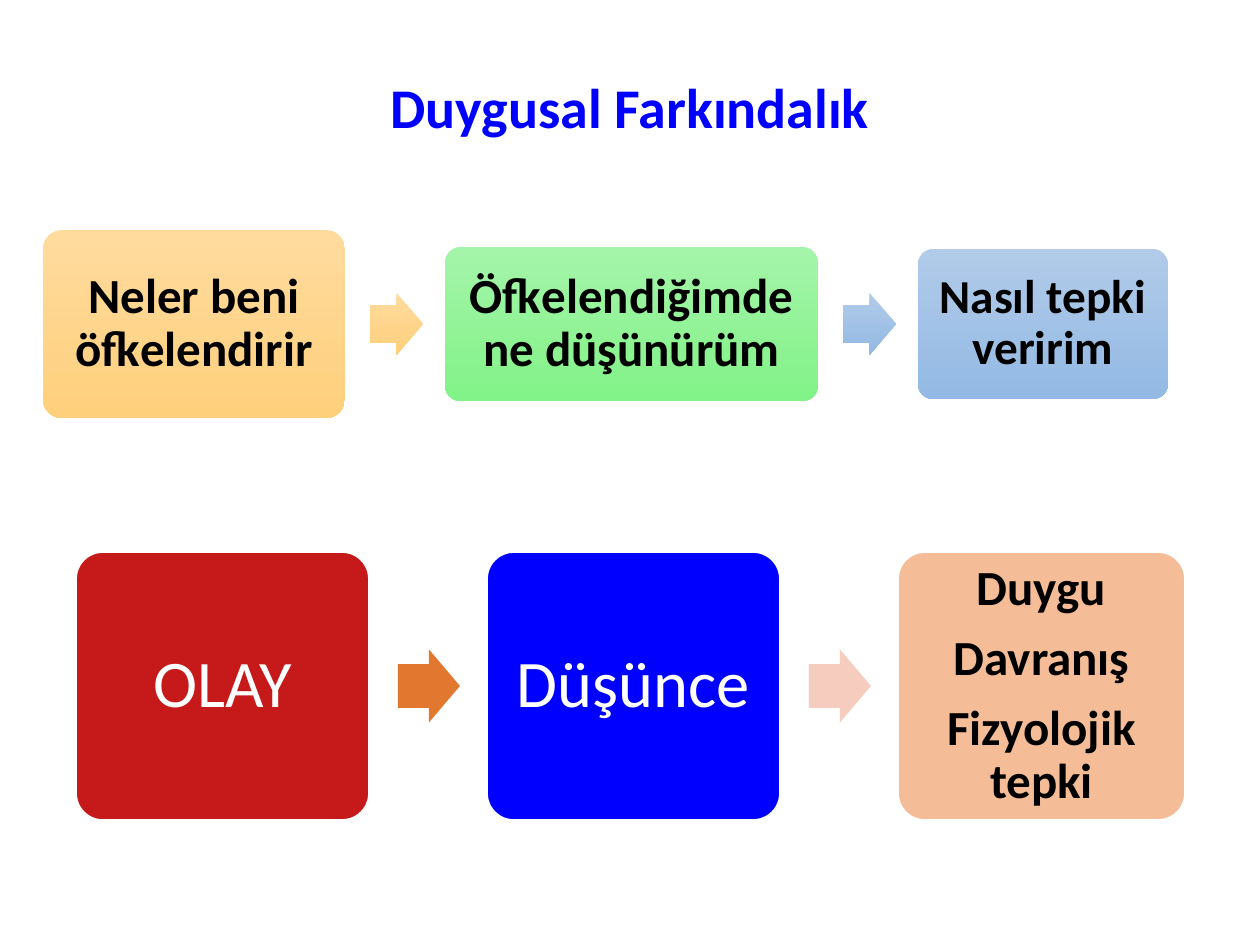
import pptx
import pptx.util
import pptx.dml.color
import pptx.enum.shapes
import pptx.enum.text
import pptx.oxml.ns
from lxml import etree

RGBColor = pptx.dml.color.RGBColor
SHAPES = pptx.enum.shapes.MSO_SHAPE
FONT = "Calibri"
PX = pptx.util.Inches(1) / 126

BLACK = RGBColor(0x00, 0x00, 0x00)
WHITE = RGBColor(0xFF, 0xFF, 0xFF)
BLUE = RGBColor(0x00, 0x00, 0xFF)
RED = RGBColor(0xC0, 0x00, 0x00)
ORANGE = RGBColor(0xED, 0x7D, 0x31)
DARK_ORANGE = RGBColor(0xE2, 0x77, 0x2F)
PINK = RGBColor(0xF6, 0xCC, 0xBF)
# Gradients run from top colour to bottom colour
AMBER = (RGBColor(0xFF, 0xDB, 0x9E), RGBColor(0xFF, 0xD0, 0x7C))
GREEN = (RGBColor(0xA4, 0xF4, 0xA9), RGBColor(0x82, 0xF3, 0x88))
SKY = (RGBColor(0xB1, 0xCB, 0xE9), RGBColor(0x93, 0xB9, 0xE4))

TITLE = "Duygusal Farkındalık"

# Box: lines, width, height, fill, opacity %, font size, bold, font colour, inset
FLOWS = [
    dict(left=43, middle=324, gap=100, arrow_offset=25, arrow_size=(53, 62),
         arrow_fills=[AMBER, SKY], outline=None,
         boxes=[
             (["Neler beni öfkelendirir"], 302, 188, AMBER, 100, 28, True, BLACK, 15),
             (["Öfkelendiğimde ne düşünürüm"], 373, 154, GREEN, 100, 28, True, BLACK, 15),
             (["Nasıl tepki veririm"], 250, 150, SKY, 100, 27, True, BLACK, 14),
         ]),
    dict(left=76, middle=686, gap=118, arrow_offset=29, arrow_size=(62, 73),
         arrow_fills=[DARK_ORANGE, PINK], outline=WHITE,
         boxes=[
             (["OLAY"], 293, 268, RED, 90, 38, False, WHITE, 20),
             (["Düşünce"], 293, 268, BLUE, 100, 38, False, WHITE, 20),
             (["Duygu", "Davranış", "Fizyolojik tepki"],
              287, 268, ORANGE, 50, 28, True, BLACK, 15),
         ]),
]


def px(value):
    return pptx.util.Emu(round(value * PX))


def write_text(shape, lines, size, bold, color, insets, space_after=0):
    frame = shape.text_frame
    frame.word_wrap = True
    frame.vertical_anchor = pptx.enum.text.MSO_ANCHOR.MIDDLE
    (frame.margin_left, frame.margin_top,
     frame.margin_right, frame.margin_bottom) = map(px, insets)
    frame.text = "\n".join(lines)
    for paragraph in frame.paragraphs:
        paragraph.alignment = pptx.enum.text.PP_ALIGN.CENTER
        paragraph.line_spacing = 0.9
        paragraph.space_after = pptx.util.Pt(space_after)
        font = paragraph.font
        font.name, font.size, font.bold = FONT, pptx.util.Pt(size), bold
        font.color.rgb = color


def add_filled_shape(slide, kind, box, adjustments, fill, opacity=100, outline=None):
    shape = slide.shapes.add_shape(kind, *map(px, box))
    shape.shadow.inherit = False
    for index, value in enumerate(adjustments):
        shape.adjustments[index] = value
    if isinstance(fill, RGBColor):
        shape.fill.solid()
        shape.fill.fore_color.rgb = fill
        if opacity < 100:
            color = shape.fill._xPr.find(".//" + pptx.oxml.ns.qn("a:srgbClr"))
            etree.SubElement(color, pptx.oxml.ns.qn("a:alpha"), val=str(opacity * 1000))
    else:
        shape.fill.gradient()
        shape.fill.gradient_angle = 270
        for stop, color in zip(shape.fill.gradient_stops, fill):
            stop.color.rgb = color
    if outline is None:
        shape.line.fill.background()
    else:
        shape.line.color.rgb = outline
        shape.line.width = pptx.util.Pt(1)
    return shape


def add_flow(slide, flow):
    left, middle = flow["left"], flow["middle"]
    arrow_width, arrow_height = flow["arrow_size"]
    for index, box in enumerate(flow["boxes"]):
        lines, width, height, fill, opacity, size, bold, color, inset = box
        shape = add_filled_shape(slide, SHAPES.ROUNDED_RECTANGLE,
                                 (left, middle - height / 2, width, height),
                                 [0.1], fill, opacity, flow["outline"])
        write_text(shape, lines, size, bold, color, [inset] * 4, size * 0.35)
        # Arrow to the next box
        if index < len(flow["arrow_fills"]):
            arrow_left = left + width + flow["arrow_offset"]
            add_filled_shape(slide, SHAPES.RIGHT_ARROW,
                             (arrow_left, middle - arrow_height / 2,
                              arrow_width, arrow_height),
                             [0.6, 0.5], flow["arrow_fills"][index])
        left += width + flow["gap"]


def main():
    presentation = pptx.Presentation()
    presentation.slide_width, presentation.slide_height = px(1260), px(945)
    slide = presentation.slides.add_slide(presentation.slide_layouts[6])

    # Title, raised above the middle of its box by a deep bottom inset
    title = slide.shapes.add_textbox(px(87), px(50), px(1086), px(183))
    write_text(title, [TITLE], 32, True, BLUE, (13, 6, 13, 68))

    # Two rows of boxes joined by arrows
    for flow in FLOWS:
        add_flow(slide, flow)

    presentation.save("out.pptx")


if __name__ == "__main__":
    main()
